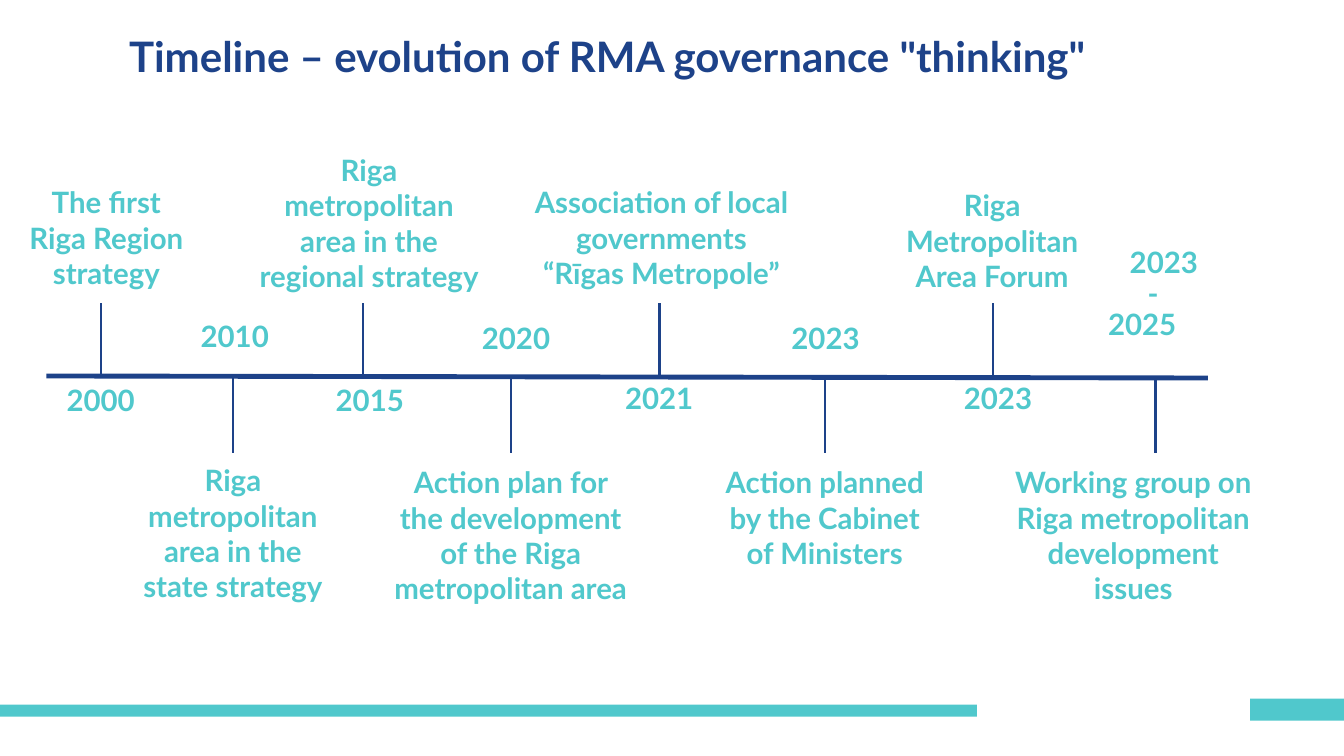
from pptx import Presentation
from pptx.dml.color import RGBColor
from pptx.enum.shapes import MSO_CONNECTOR, MSO_SHAPE
from pptx.enum.text import MSO_ANCHOR, PP_ALIGN
from pptx.oxml.ns import qn
from pptx.util import Inches, Pt
from lxml import etree

NAVY, TEAL = "1D4289", "50C8CC"
FONT = "Lato"
AXIS_Y, TICK = 3.75, 0.74

# tick x, direction (-1 up, 1 down), year, year box (left, top),
# caption, caption box (left, top, width, height)
EVENTS = [
    (1.0, -1, "2000", (0.59, 3.75),
     "The first Riga Region strategy", (0.14, 1.78, 1.83, 1.67)),
    (2.31, 1, "2010", (1.92, 3.12),
     "Riga metropolitan area in the state strategy", (1.21, 4.54, 2.2, 1.67)),
    (3.6, -1, "2015", (3.26, 3.75),
     "Riga metropolitan area in the regional strategy", (2.42, 1.46, 2.48, 1.67)),
    (5.07, 1, "2020", (4.71, 3.14),
     "Action plan for the development\vof the Riga metropolitan area",
     (3.76, 4.56, 2.61, 2.06)),
    (6.54, -1, "2021", (6.13, 3.73),
     "Association of local governments\v“Rīgas Metropole”", (5.17, 1.78, 2.78, 1.67)),
    (8.18, 1, "2023", (7.78, 3.14),
     "Action planned by the Cabinet of Ministers", (7.08, 4.56, 2.2, 1.67)),
    (9.85, -1, "2023", (9.49, 3.73),
     "Riga Metropolitan Area Forum", (8.74, 1.81, 2.2, 1.67)),
    (11.46, 1, None, None,
     "Working group on\vRiga metropolitan development issues", (9.92, 4.56, 2.64, 1.97)),
]


def rgb(value):
    return RGBColor.from_string(value)


def add_bar(s, *box):
    sp = s.shapes.add_shape(MSO_SHAPE.RECTANGLE, *map(Inches, box))
    sp.shadow.inherit = False
    sp.fill.solid()
    sp.fill.fore_color.rgb = rgb(TEAL)
    sp.line.fill.background()


def add_line(s, x1, y1, x2, y2, width):
    ln = s.shapes.add_connector(MSO_CONNECTOR.STRAIGHT, *map(Inches, (x1, y1, x2, y2)))
    ln.line.color.rgb = rgb(NAVY)
    ln.line.width = Pt(width)
    etree.SubElement(ln._element.spPr, qn("a:effectLst"))


def add_text(s, box, lines, size=21, color=TEAL, anchor=MSO_ANCHOR.TOP,
             aligns=(PP_ALIGN.CENTER,), insets=(0.1, 0.05, 0.1, 0.05), spacing=None):
    """One paragraph for each line, each with its own alignment."""
    tf = s.shapes.add_textbox(*map(Inches, box)).text_frame
    tf.word_wrap = True
    tf.vertical_anchor = anchor
    tf.margin_left, tf.margin_top, tf.margin_right, tf.margin_bottom = map(Inches, insets)
    for i, (line, align) in enumerate(zip(lines, aligns)):
        p = tf.paragraphs[0] if i == 0 else tf.add_paragraph()
        p.text = line
        p.alignment = align
        if spacing:
            p.line_spacing = spacing
        p.font.name = FONT
        p.font.size = Pt(size)
        p.font.bold = True
        p.font.color.rgb = rgb(color)


def add_event(s, x, direction, year, year_at, caption, caption_box):
    add_line(s, x, AXIS_Y, x, AXIS_Y + direction * TICK, 1.75)
    if year:
        add_text(s, (*year_at, 0.86, 0.63), [year], anchor=MSO_ANCHOR.MIDDLE,
                 aligns=[PP_ALIGN.LEFT], insets=(0.07, 0.04, 0.07, 0.24))
    add_text(s, caption_box, [caption])


def main():
    prs = Presentation()
    prs.slide_width, prs.slide_height = Inches(13.33), Inches(7.5)
    s = prs.slides.add_slide(prs.slide_layouts[6])

    # Footer bars
    add_bar(s, 0, 6.99, 9.69, 0.12)
    add_bar(s, 12.4, 6.93, 0.93, 0.22)

    # Title
    add_text(s, (0.27, 0.24, 11.51, 0.63),
             ['Timeline – evolution of RMA governance "thinking"'],
             size=30, color=NAVY, anchor=MSO_ANCHOR.MIDDLE)

    # Timeline
    add_line(s, 0.46, 3.73, 11.98, 3.75, 3.5)
    for event in EVENTS:
        add_event(s, *event)

    # Stepped period label of the last event
    add_text(s, (10.92, 2.47, 1.06, 0.92), ["2023", "-", "2025"],
             anchor=MSO_ANCHOR.MIDDLE,
             aligns=(PP_ALIGN.RIGHT, PP_ALIGN.CENTER, PP_ALIGN.LEFT),
             insets=(0.07, 0.04, 0.1, 0.04), spacing=0.87)

    prs.save("out.pptx")


if __name__ == "__main__":
    main()
